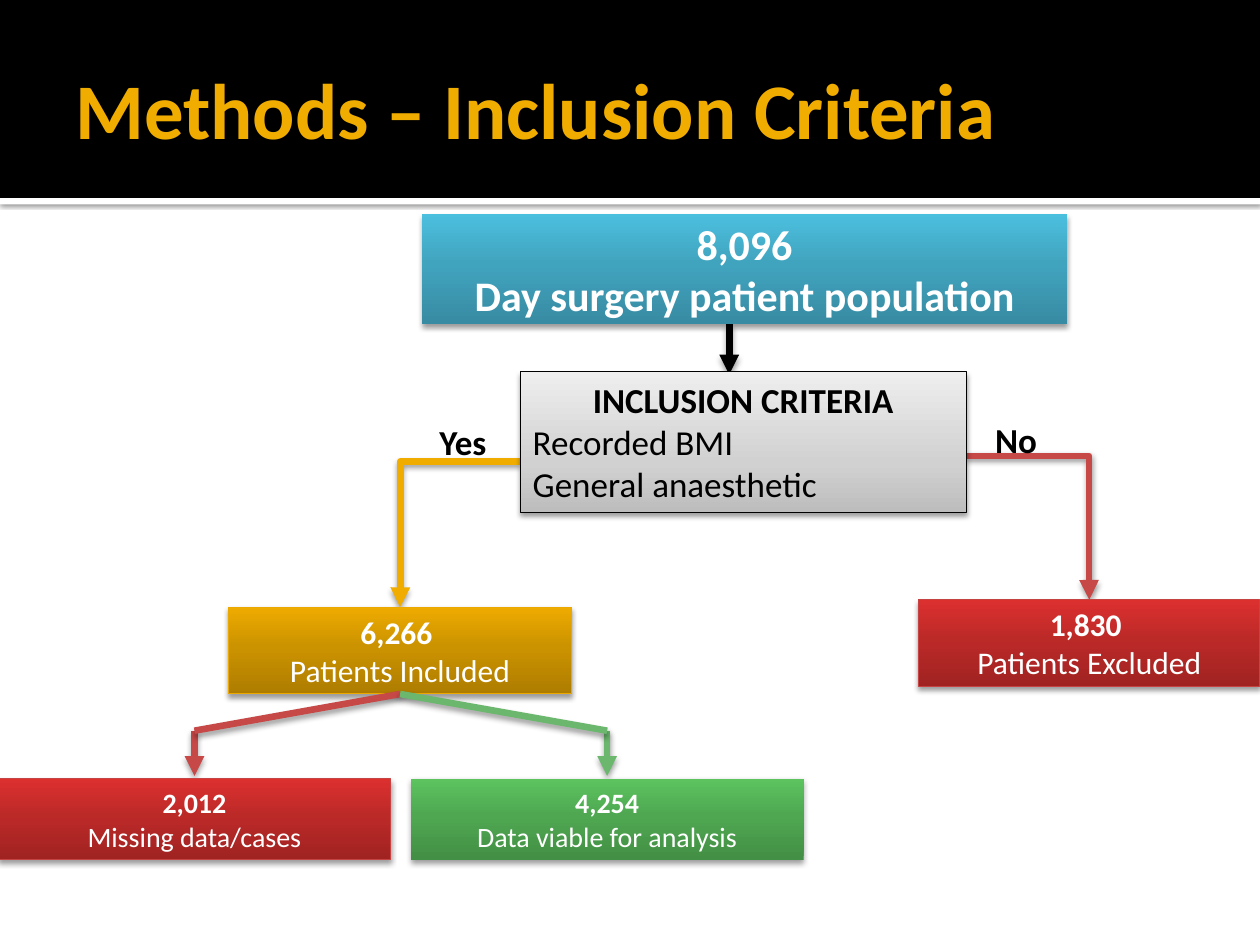
from copy import deepcopy

from lxml import etree
from pptx import Presentation
from pptx.dml.color import RGBColor
from pptx.enum.shapes import MSO_CONNECTOR, MSO_SHAPE
from pptx.enum.text import MSO_ANCHOR, PP_ALIGN
from pptx.oxml.ns import qn
from pptx.util import Cm, Pt

RECT = MSO_SHAPE.RECTANGLE
LINE, ELBOW = MSO_CONNECTOR.STRAIGHT, MSO_CONNECTOR.ELBOW
LEFT, CENTER = PP_ALIGN.LEFT, PP_ALIGN.CENTER
TOP, MIDDLE = MSO_ANCHOR.TOP, MSO_ANCHOR.MIDDLE

FONT = "Calibri"
BLACK = RGBColor(0x00, 0x00, 0x00)
WHITE = RGBColor(0xFF, 0xFF, 0xFF)
GOLD = RGBColor(0xF0, 0xAD, 0x00)
RED = RGBColor(0xC6, 0x48, 0x47)
GREEN = RGBColor(0x6B, 0xB7, 0x6D)
RED_EDGE = RGBColor(0xC5, 0x43, 0x42)
GOLD_EDGE = RGBColor(0xEB, 0xA9, 0x00)


def ramp(mid, *codes):
    """Gradient stops from bottom to top, the middle one at mid."""
    return list(zip((0, mid, 1), map(RGBColor.from_string, codes)))


REDS = ramp(0.55, "A02322", "BC2A28", "DC302F")
GREENS = ramp(0.55, "438F45", "4FA851", "5CC35F")
GOLDS = ramp(0.55, "AE7D00", "CC9300", "EEAB00")
BLUES = ramp(0.55, "378BA2", "41A4BF", "4BBFDE")
GREYS = ramp(0.35, "BDBDBD", "D1D1D1", "EEEEEE")

WIDTH, HEIGHT = 25.4, 19.05
HEAD = 3.99
TITLE = "Methods – Inclusion Criteria"

# name: (left, top, width, height), stops, edge, text colour, size, lines
# each line: text, bold, alignment
BOXES = {
    "missing": ((-0.03, 15.7, 7.9, 1.63), REDS, RED_EDGE, WHITE, 16,
                [("2,012", True, CENTER),
                 ("Missing data/cases", False, CENTER)]),
    "viable": ((8.28, 15.7, 7.92, 1.63), GREENS, None, WHITE, 16,
               [("4,254", True, CENTER),
                ("Data viable for analysis", False, CENTER)]),
    "included": ((4.6, 12.24, 6.93, 1.75), GOLDS, GOLD_EDGE, WHITE, 18,
                 [("6,266 ", True, CENTER),
                  ("Patients Included", False, CENTER)]),
    "excluded": ((18.52, 12.09, 6.88, 1.75), REDS, RED_EDGE, WHITE, 18,
                 [("1,830 ", True, CENTER),
                  ("Patients Excluded", False, CENTER)]),
    "criteria": ((10.49, 7.49, 8.99, 2.84), GREYS, BLACK, BLACK, 20,
                 [("INCLUSION CRITERIA", True, CENTER),
                  ("Recorded BMI", False, LEFT),
                  ("General anaesthetic", False, LEFT)]),
    "people": ((8.51, 4.32, 13, 2.21), BLUES, None, WHITE, 24,
               [("8,096", True, CENTER),
                ("Day surgery patient population", True, CENTER)]),
}
LABELS = [("No", 19.81, 8.31), ("Yes", 8.61, 8.36)]
FORK = [("missing", RED), ("viable", GREEN)]
FORK_Y = 14.73
GAP = 0.06


def place(box):
    return [Cm(n) for n in box]


def middle(name):
    left, _, width, _ = BOXES[name][0]
    return left + width / 2


def top(name):
    return BOXES[name][0][1]


def bottom(name):
    return top(name) + BOXES[name][0][3]


def cast(shape, blur=3.1, dist=2, alpha=38):
    """Give a shape or connector a black shadow straight below it."""
    props = shape._element.spPr
    for old in props.findall(qn("a:effectLst")):
        props.remove(old)
    effect = etree.SubElement(props, qn("a:effectLst"))
    outer = etree.SubElement(
        effect, qn("a:outerShdw"), blurRad=str(Pt(blur)),
        dist=str(Pt(dist)), dir="5400000", rotWithShape="0")
    tint = etree.SubElement(outer, qn("a:srgbClr"), val="000000")
    etree.SubElement(tint, qn("a:alpha"), val=str(alpha * 1000))


def shade(shape, stops):
    shape.fill.gradient()
    shape.fill.gradient_angle = 90
    first = shape._element.spPr.find(".//" + qn("a:gs"))
    first.addnext(deepcopy(first))
    for stop, (spot, color) in zip(shape.fill.gradient_stops, stops):
        stop.position = spot
        stop.color.rgb = color


def write(shape, lines, size, color, anchor):
    frame = shape.text_frame
    frame.word_wrap = True
    frame.vertical_anchor = anchor
    for i, (text, bold, align) in enumerate(lines):
        para = frame.add_paragraph() if i else frame.paragraphs[0]
        para.alignment = align
        run = para.add_run()
        run.text = text
        font = run.font
        font.name, font.size, font.bold = FONT, Pt(size), bold
        font.color.rgb = color
    return frame


def add_band(shapes, box, color):
    band = shapes.add_shape(RECT, *place(box))
    band.shadow.inherit = False
    band.fill.solid()
    band.fill.fore_color.rgb = color
    band.line.fill.background()
    return band


def add_box(shapes, box, stops, edge, color, size, lines):
    shape = shapes.add_shape(RECT, *place(box))
    shade(shape, stops)
    if edge is None:
        shape.line.fill.background()
    else:
        shape.line.color.rgb = edge
        shape.line.width = Pt(0.5)
    cast(shape)
    write(shape, lines, size, color, MIDDLE)


def add_line(shapes, start, end, color, kind=LINE, arrow=True):
    line = shapes.add_connector(kind, *place(start + end))
    line.line.color.rgb = color
    line.line.width = Pt(3.78)
    props = line._element.spPr
    if arrow:
        etree.SubElement(props.find(qn("a:ln")), qn("a:tailEnd"),
                         type="triangle")
    if kind == ELBOW:
        # the bend sits at the far end, so the line runs across, then down
        guides = props.find(qn("a:prstGeom")).find(qn("a:avLst"))
        etree.SubElement(guides, qn("a:gd"), name="adj1", fmla="val 99800")
    cast(line, blur=3.5)


def main():
    deck = Presentation()
    deck.slide_width, deck.slide_height = Cm(WIDTH), Cm(HEIGHT)
    shapes = deck.slides.add_slide(deck.slide_layouts[6]).shapes

    cast(add_band(shapes, (0, HEAD, WIDTH, 0.13), WHITE), 2.5, 0.8, 60)
    add_band(shapes, (0, 0, WIDTH, HEAD), BLACK)
    title = shapes.add_textbox(*place((1.27, 0.43, 22.86, 3.48)))
    write(title, [(TITLE, True, LEFT)], 45, GOLD, MIDDLE)

    add_line(shapes, (14.7, bottom("people")), (14.7, top("criteria") + GAP),
             BLACK)
    left, _, width, _ = BOXES["criteria"][0]
    add_line(shapes, (left, 9.3), (middle("included"), top("included")),
             GOLD, ELBOW)
    add_line(shapes, (left + width, 9.19),
             (middle("excluded"), top("excluded")), RED, ELBOW)
    for name, color in FORK:
        add_line(shapes, (middle(name), FORK_Y),
                 (middle(name), top(name) - GAP), color)

    for text, x, y in LABELS:
        label = shapes.add_textbox(*place((x, y, 1.78, 1.19)))
        frame = write(label, [(text, True, LEFT)], 20, BLACK, TOP)
        frame.paragraphs[0].space_after = Pt(10)
    for spot in BOXES.values():
        add_box(shapes, *spot)
    for name, color in FORK:
        add_line(shapes, (middle("included"), bottom("included")),
                 (middle(name), FORK_Y), color, arrow=False)

    deck.save("out.pptx")


if __name__ == "__main__":
    main()
